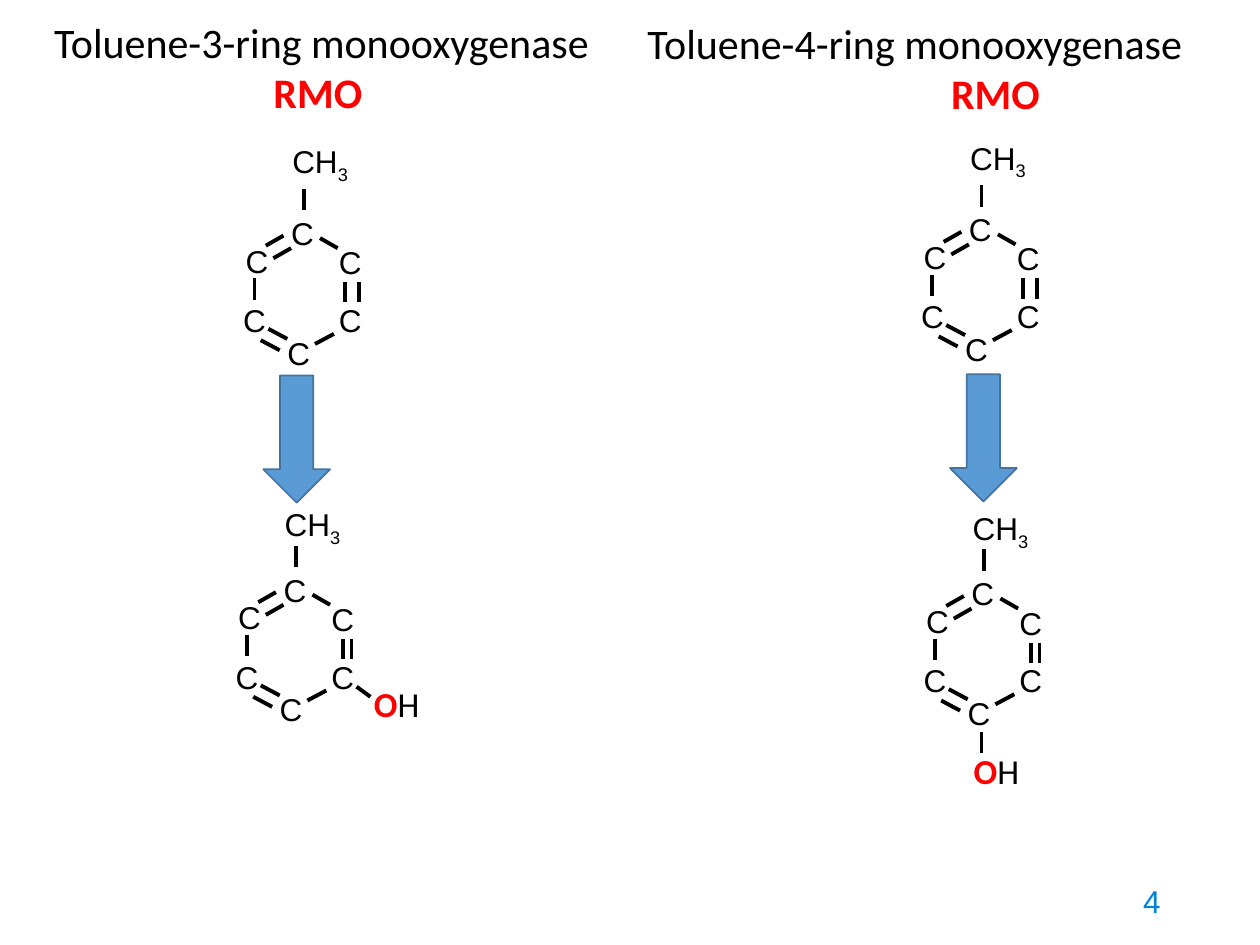
from dataclasses import dataclass
from lxml.etree import SubElement
from pptx import Presentation
from pptx.dml.color import RGBColor
from pptx.enum.shapes import MSO_CONNECTOR, MSO_SHAPE
from pptx.enum.text import MSO_ANCHOR, PP_ALIGN
from pptx.oxml.ns import qn
from pptx.util import Inches, Pt


@dataclass(frozen=True)
class Theme:
    black: str = "000000"
    red: str = "FF0000"
    blue: str = "5B9BD5"
    edge: str = "43739E"
    page: str = "0082DA"
    head: int = 24
    atom: int = 18
    oxy: int = 20
    sans: str = "Arial"
    body: str = "Calibri"
    bond: float = 2.25


THEME = Theme()
ATOMS = [(0, 0), (-0.36, 0.22), (-0.38, 0.69),
         (0.38, 0.23), (0.38, 0.69), (-0.03, 0.95)]
BONDS = [(-0.29, 0.51, -0.29, 0.68), (-0.06, 0.17, -0.2, 0.25),
         (0, 0.27, -0.14, 0.35), (0.34, 0.95, 0.19, 1.03),
         (-0.18, 0.91, -0.03, 0.99), (-0.24, 1, -0.09, 1.08),
         (0.23, 0.19, 0.37, 0.27)]


def style(run, size, color, face, bold=False):
    font = run.font
    font.size = Pt(size)
    font.name = face
    font.bold = bold
    font.color.rgb = RGBColor.from_string(color)


def place(shape, left, top, width, height):
    shape.left, shape.top = Inches(left), Inches(top)
    shape.width, shape.height = Inches(width), Inches(height)


def add_text(shapes, left, top, width, height):
    box = shapes.add_textbox(Inches(left), Inches(top), Inches(width), Inches(height))
    box.text_frame.word_wrap = True
    return box


def add_head(box, left, top, text, indent):
    place(box, left, top, 6.4, 0.91)
    frame = box.text_frame
    frame.word_wrap = True
    frame.vertical_anchor = MSO_ANCHOR.TOP
    frame.text = text + "\nRMO"
    name, short = frame.paragraphs
    name.alignment = short.alignment = PP_ALIGN.LEFT
    style(name.runs[0], THEME.head, THEME.black, THEME.body)
    style(short.runs[0], THEME.head, THEME.red, THEME.body, True)
    short._p.get_or_add_pPr().set("marL", str(Inches(indent)))


def add_atom(shapes, left, top, text="C", width=0.25, sub=""):
    frame = add_text(shapes, left, top, width, 0.3).text_frame
    frame.margin_left = frame.margin_right = 0
    frame.margin_top = frame.margin_bottom = 0
    para = frame.paragraphs[0]
    para.text = text
    if sub:
        low = para.add_run()
        low.text = sub
        low.font._element.set("baseline", "-25000")
    for run in para.runs:
        style(run, THEME.atom, THEME.black, THEME.sans)


def add_bond(shapes, x1, y1, x2, y2):
    bond = shapes.add_connector(MSO_CONNECTOR.STRAIGHT, Inches(x1), Inches(y1),
                                Inches(x2), Inches(y2))
    bond.line.color.rgb = RGBColor.from_string(THEME.black)
    bond.line.width = Pt(THEME.bond)
    SubElement(bond._element.spPr, qn("a:effectLst"))


def add_ring(shapes, x, y, inner, outer, rise, wide):
    for dx, dy in ATOMS:
        add_atom(shapes, x + dx, y + dy)
    stem = (0.1, -0.2, 0.1, -0.03)
    pair = [(dx, 0.54, dx, 0.7) for dx in (inner, outer)]
    for x1, y1, x2, y2 in BONDS + pair + [stem]:
        add_bond(shapes, x + x1, y + y1, x + x2, y + y2)
    add_atom(shapes, x + 0.01, y - rise, "CH", wide, "3")


def add_arrow(shapes, left, top):
    arrow = shapes.add_shape(MSO_SHAPE.DOWN_ARROW, Inches(left), Inches(top),
                             Inches(0.53), Inches(1.01))
    arrow.shadow.inherit = False
    arrow.fill.solid()
    arrow.fill.fore_color.rgb = RGBColor.from_string(THEME.blue)
    arrow.line.color.rgb = RGBColor.from_string(THEME.edge)
    arrow.line.width = Pt(1)


def add_oxy(shapes, left, top):
    para = add_text(shapes, left, top, 0.6, 0.44).text_frame.paragraphs[0]
    para.text = "O"
    para.add_run().text = "H"
    style(para.runs[0], THEME.oxy, THEME.red, THEME.body, True)
    style(para.runs[1], THEME.oxy, THEME.black, THEME.body)


def add_path(slide, start, arrow, end, oxy, bond):
    shapes = slide.shapes.add_group_shape().shapes
    add_ring(shapes, *start, 0.43, 0.54, 0.57, 0.63)
    add_arrow(shapes, *arrow)
    add_ring(shapes, *end, 0.47, 0.54, 0.52, 0.91)
    add_oxy(shapes, *oxy)
    add_bond(shapes, *bond)


def add_page(slide):
    frame = add_text(slide.shapes, 7.06, 6.95, 2.25, 0.4).text_frame
    frame.vertical_anchor = MSO_ANCHOR.MIDDLE
    para = frame.paragraphs[0]
    para.text = "4"
    para.alignment = PP_ALIGN.RIGHT
    style(para.runs[0], THEME.atom, THEME.page, THEME.sans)


def main():
    deck = Presentation()
    deck.slide_width, deck.slide_height = Inches(10), Inches(7.5)
    slide = deck.slides.add_slide(deck.slide_layouts[5])
    add_head(slide.shapes.title, 0.33, 0.08, "Toluene-3-ring monooxygenase", 1.74)
    other = add_text(slide.shapes, 5.04, 0.09, 6.4, 0.91)
    add_head(other, 5.04, 0.09, "Toluene-4-ring monooxygenase", 2.41)
    add_path(slide, (2.31, 1.7), (2.09, 2.98), (2.25, 4.53),
             (2.87, 5.37), (2.83, 5.45, 2.94, 5.53))
    add_path(slide, (7.69, 1.67), (7.54, 2.97), (7.71, 4.56),
             (7.63, 5.9), (7.79, 5.81, 7.79, 5.98))
    add_page(slide)
    deck.save("out.pptx")


if __name__ == "__main__":
    main()
